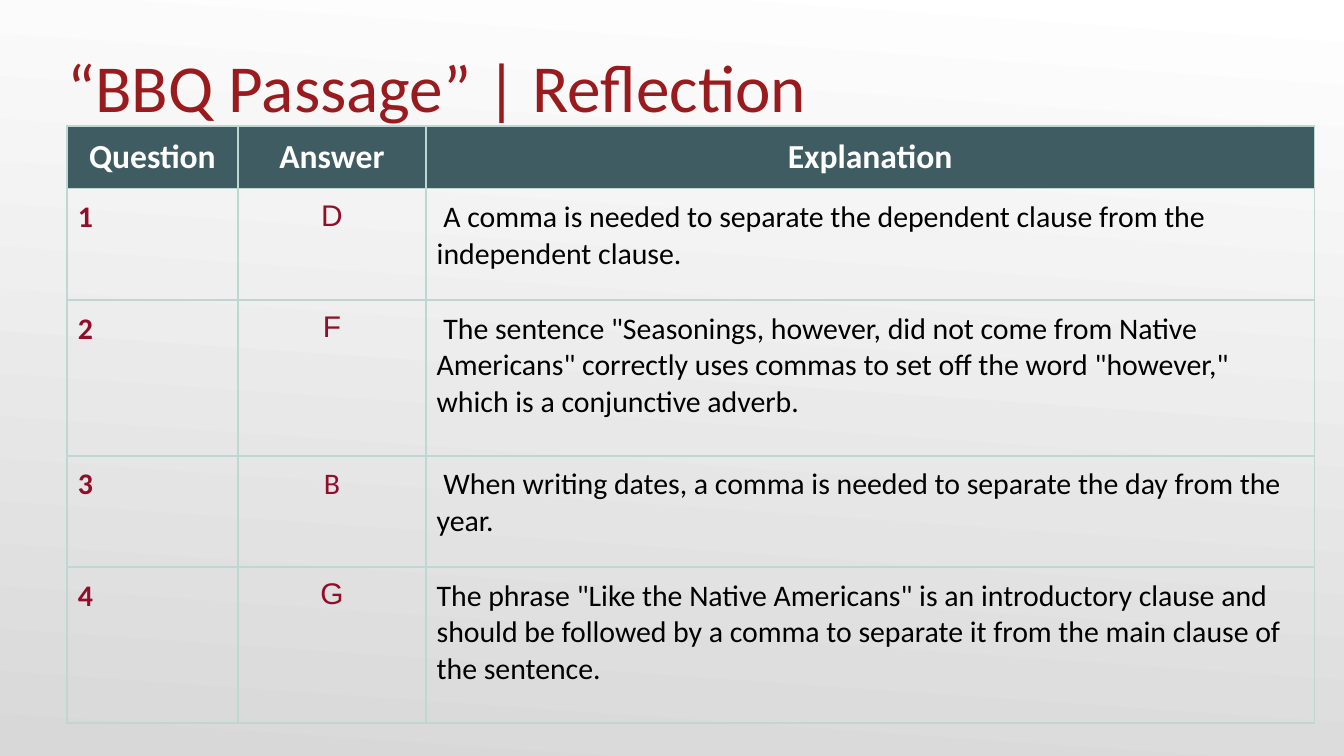
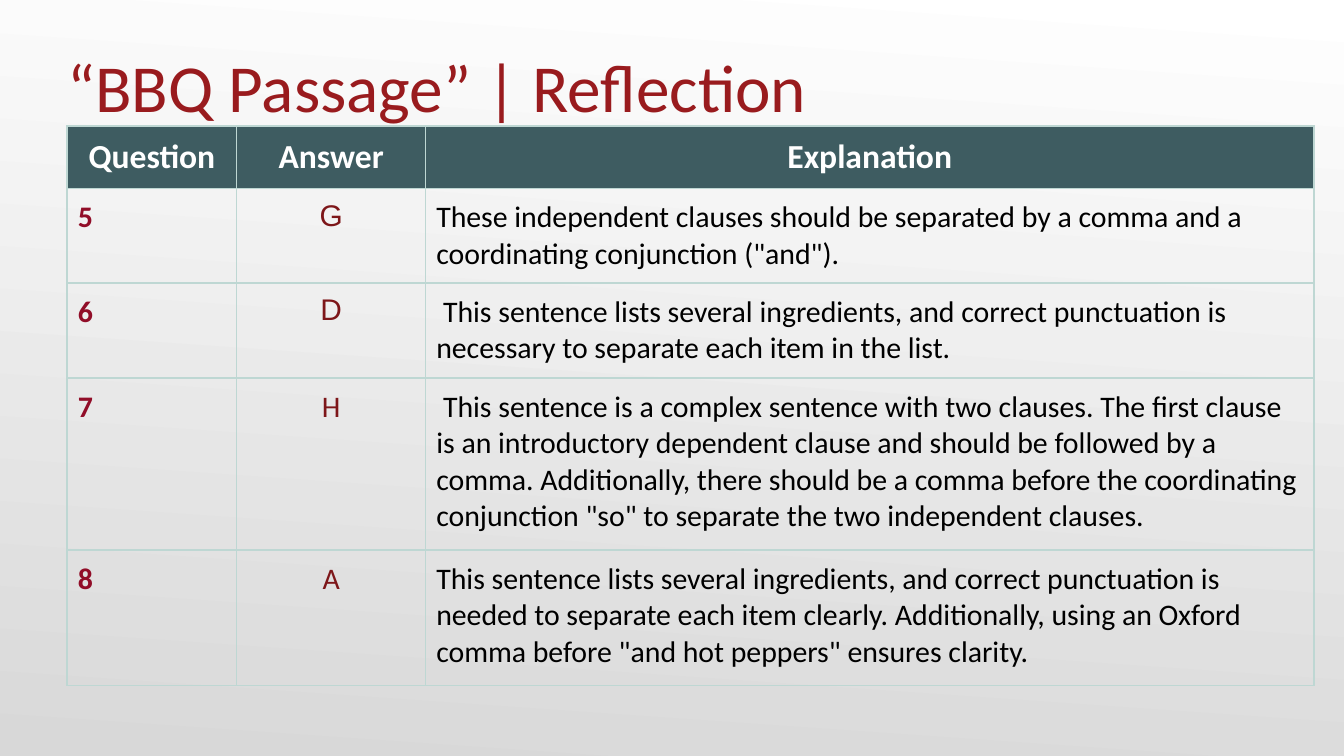
from pptx import Presentation
from pptx import util as u
from pptx.dml.color import RGBColor
from pptx.enum import text
from pptx.oxml import parse_xml
from pptx.oxml.ns import nsdecls

# Content: question, answer, answer font, explanation, row height
TITLE = "“BBQ Passage” | Reflection"
HEADINGS = ("Question", "Answer", "Explanation")
SLIDES = [
    {"answer_color": "910D28", "cols": (91.4, 100.8, 476), "rows": [
        ("1", "D", "Arial", " A comma is needed to separate the dependent clause "
         "from the independent clause.", 59.7),
        ("2", "F", "Arial", ' The sentence "Seasonings, however, did not come from '
         'Native Americans" correctly uses commas to set off the word "however," '
         "which is a conjunctive adverb.", 83.5),
        ("3", "B", "Calibri", " When writing dates, a comma is needed to separate "
         "the day from the year.", 59.7),
        ("4", "G", "Arial", 'The phrase "Like the Native Americans" is an '
         "introductory clause and should be followed by a comma to separate it "
         "from the main clause of the sentence.", 83.5),
    ]},
    {"answer_color": "7D1619", "cols": (90.8, 101.2, 476), "rows": [
        ("5", "G", "Arial", "These independent clauses should be separated by a "
         'comma and a coordinating conjunction ("and").', 50.6),
        ("6", "D", "Arial", " This sentence lists several ingredients, and correct "
         "punctuation is necessary to separate each item in the list.", 51),
        ("7", "H", "Calibri", " This sentence is a complex sentence with two "
         "clauses. The first clause is an introductory dependent clause and should "
         "be followed by a comma. Additionally, there should be a comma before the "
         'coordinating conjunction "so" to separate the two independent clauses.',
         92),
        ("8", "A", "Calibri", "This sentence lists several ingredients, and correct "
         "punctuation is needed to separate each item clearly. Additionally, using "
         'an Oxford comma before "and hot peppers" ensures clarity.', 72.7),
    ]},
]

# Shared style
FONT = "Calibri"
RED, NUMBER_RED = "991B1E", "910D28"
WHITE, BLACK, GREY = "FFFFFF", "000000", "D8D8D8"
TEAL, BORDER = "3E5C61", "BED7D3"
LEFT, TABLE_TOP, HEADER_H, INSET = 36, 67.5, 33.5, 5.76
PP = text.PP_ALIGN


def rgb(color):
    return RGBColor.from_string(color)


def add_run(p, words, size, color, font=FONT, bold=False):
    r = p.add_run()
    r.text = words
    r.font.name, r.font.size, r.font.bold = font, u.Pt(size), bold
    r.font.color.rgb = rgb(color)


def set_insets(frame, left, top, right, bottom):
    frame.margin_left, frame.margin_top = u.Pt(left), u.Pt(top)
    frame.margin_right, frame.margin_bottom = u.Pt(right), u.Pt(bottom)


def add_borders(cell):
    tcPr = cell._tc.get_or_add_tcPr()
    for side in ("lnL", "lnR", "lnT", "lnB"):
        tcPr.append(parse_xml(
            f'<a:{side} {nsdecls("a")} w="{u.Pt(1)}"><a:solidFill>'
            f'<a:srgbClr val="{BORDER}"/></a:solidFill></a:{side}>'))


def fill_cell(cell, words, size, color, font=FONT, bold=False,
              align=PP.LEFT, fill=None):
    set_insets(cell, INSET, INSET, INSET, INSET)
    add_borders(cell)
    if fill:
        cell.fill.solid()
        cell.fill.fore_color.rgb = rgb(fill)
    else:
        cell.fill.background()
    p = cell.text_frame.paragraphs[0]
    p.alignment = align
    add_run(p, words, size, color, font, bold)


def set_background(master):
    fill = master.background.fill
    fill.gradient()
    fill.gradient_angle = 266
    for stop, color in zip(fill.gradient_stops, (WHITE, GREY)):
        stop.color.rgb = rgb(color)


def add_title(s):
    sp = s.shapes.title
    sp.left, sp.top, sp.width, sp.height = map(u.Pt, (LEFT, 0, 648, TABLE_TOP))
    tf = sp.text_frame
    tf.word_wrap = True
    tf.auto_size = text.MSO_AUTO_SIZE.NONE
    tf.vertical_anchor = text.MSO_ANCHOR.BOTTOM
    set_insets(tf, 0, 3.6, 0, 0)
    p = tf.paragraphs[0]
    p.alignment = PP.LEFT
    add_run(p, TITLE, 36, RED)


def add_answers(s, cols, rows, answer_color):
    heights = [HEADER_H] + [row[-1] for row in rows]
    table = s.shapes.add_table(
        len(heights), len(cols), u.Pt(LEFT), u.Pt(TABLE_TOP),
        u.Pt(sum(cols)), u.Pt(sum(heights))).table
    table.horz_banding = False
    for column, width in zip(table.columns, cols):
        column.width = u.Pt(width)
    for row, height in zip(table.rows, heights):
        row.height = u.Pt(height)
    # Header row
    for c, heading in enumerate(HEADINGS):
        fill_cell(table.cell(0, c), heading, 18, WHITE, bold=True,
                  align=PP.CENTER, fill=TEAL)
    # One row per question
    for i, (number, answer, font, explanation, _) in enumerate(rows, 1):
        fill_cell(table.cell(i, 0), number, 16, NUMBER_RED, bold=True)
        fill_cell(table.cell(i, 1), answer, 16, answer_color, font,
                  align=PP.CENTER)
        fill_cell(table.cell(i, 2), explanation, 16, BLACK)


def main():
    prs = Presentation()
    prs.slide_width, prs.slide_height = u.Pt(720), u.Pt(405)
    set_background(prs.slide_master)
    for content in SLIDES:
        s = prs.slides.add_slide(prs.slide_layouts[5])
        add_title(s)
        add_answers(s, **content)
    prs.save("out.pptx")


if __name__ == "__main__":
    main()
